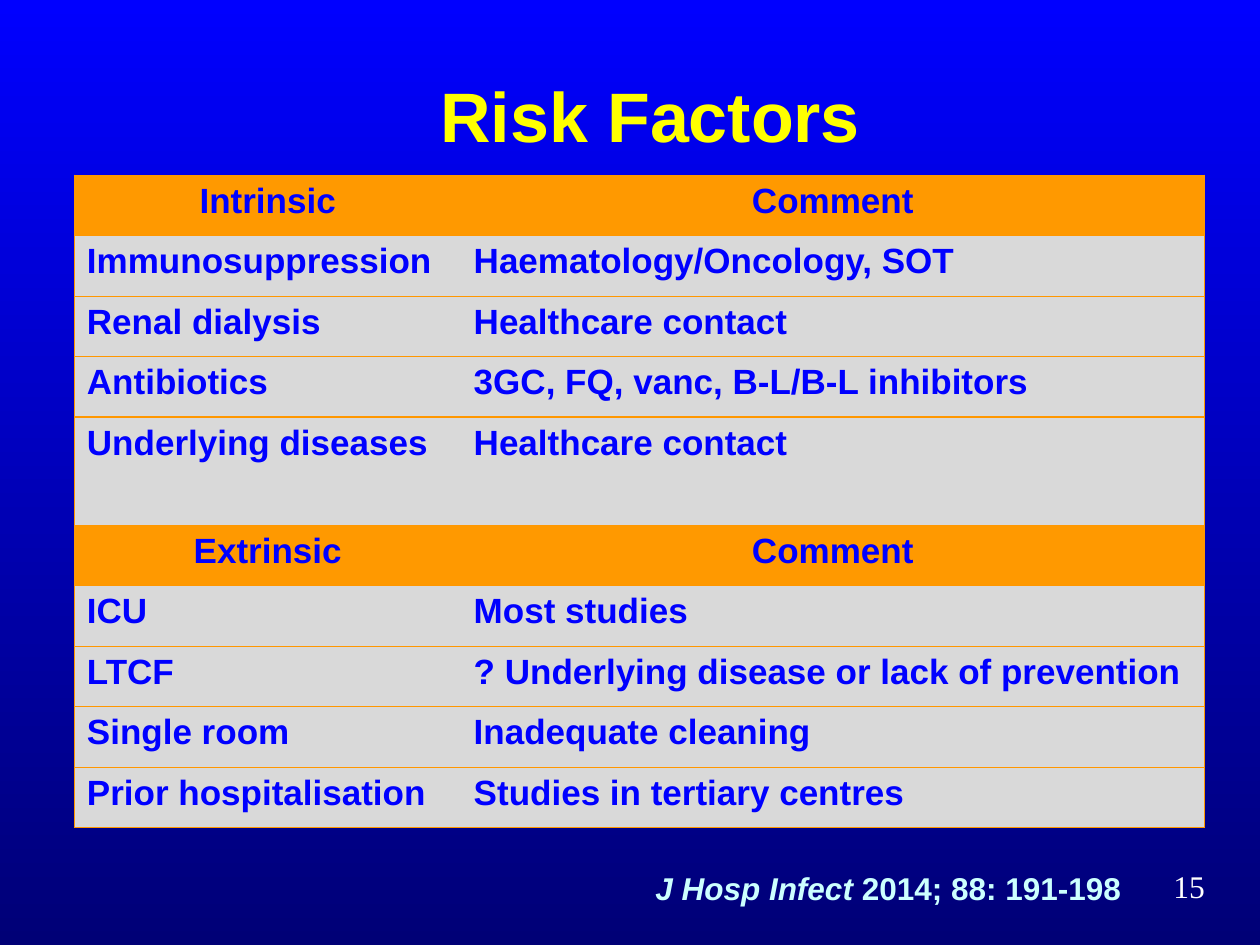
import dataclasses

import pptx
import pptx.dml.color
import pptx.enum.text
import pptx.oxml
import pptx.oxml.ns
import pptx.util

Inches = pptx.util.Inches
Pt = pptx.util.Pt
RGBColor = pptx.dml.color.RGBColor
Align = pptx.enum.text.PP_ALIGN
Anchor = pptx.enum.text.MSO_ANCHOR

BLUE = RGBColor(0x00, 0x00, 0xFF)
NAVY = RGBColor(0x00, 0x00, 0x76)
YELLOW = RGBColor(0xFF, 0xFF, 0x00)
ORANGE = RGBColor(0xFF, 0x99, 0x00)
BORDER = RGBColor(0xFF, 0x97, 0x00)
GREY = RGBColor(0xD9, 0xD9, 0xD9)
PALE_CYAN = RGBColor(0xCC, 0xFF, 0xFF)
WHITE = RGBColor(0xFF, 0xFF, 0xFF)

NO_STYLE = "{2D5ABB26-0587-4C30-8999-92F81FD0307C}"
COLUMN_WIDTHS = (3.07, 5.9)


@dataclasses.dataclass(frozen=True)
class RiskRow:
    factor: str
    comment: str
    heading: bool = False
    height: float = 0.48


RISK_ROWS = (
    RiskRow("Intrinsic", "Comment", heading=True),
    RiskRow("Immunosuppression", "Haematology/Oncology, SOT"),
    RiskRow("Renal dialysis", "Healthcare contact"),
    RiskRow("Antibiotics", "3GC, FQ, vanc, B-L/B-L inhibitors"),
    RiskRow("Underlying diseases", "Healthcare contact", height=0.86),
    RiskRow("Extrinsic", "Comment", heading=True),
    RiskRow("ICU", "Most studies"),
    RiskRow("LTCF", "? Underlying disease or lack of prevention"),
    RiskRow("Single room", "Inadequate cleaning"),
    RiskRow("Prior hospitalisation", "Studies in tertiary centres"),
)


def write(frame, text: str, *, size: float, color: RGBColor, font: str = "Arial",
          bold: bool = True, italic: bool = False, align=Align.LEFT) -> None:
    """Add a formatted run to the first paragraph of a text frame."""
    paragraph = frame.paragraphs[0]
    paragraph.alignment = align
    run = paragraph.add_run()
    run.text = text
    run.font.name = font
    run.font.size = Pt(size)
    run.font.bold = bold
    run.font.italic = italic
    run.font.color.rgb = color


def add_text_frame(slide, left: float, top: float, width: float, height: float):
    box = slide.shapes.add_textbox(Inches(left), Inches(top), Inches(width), Inches(height))
    box.text_frame.word_wrap = True
    return box.text_frame


def draw_borders(cell, sides: str) -> None:
    """Line the given sides, in the schema's order L, R, T, B."""
    properties = cell._tc.get_or_add_tcPr()
    for position, side in enumerate(sides):
        properties.insert(position, pptx.oxml.parse_xml(
            f'<a:ln{side} {pptx.oxml.ns.nsdecls("a")} w="{Pt(0.75)}">'
            f'<a:solidFill><a:srgbClr val="{BORDER}"/></a:solidFill></a:ln{side}>'))


def add_risk_table(slide, left: float, top: float, rows: tuple[RiskRow, ...]) -> None:
    table = slide.shapes.add_table(
        len(rows), len(COLUMN_WIDTHS), Inches(left), Inches(top),
        Inches(sum(COLUMN_WIDTHS)), Inches(sum(row.height for row in rows))).table
    table.first_row = table.horz_banding = False
    table._tbl.tblPr.find(pptx.oxml.ns.qn("a:tableStyleId")).text = NO_STYLE
    for column, width in zip(table.columns, COLUMN_WIDTHS):
        column.width = Inches(width)
    for index, row in enumerate(rows):
        table.rows[index].height = Inches(row.height)
        for cell, text, sides in zip(table.rows[index].cells,
                                     (row.factor, row.comment), ("LTB", "RTB")):
            cell.fill.solid()
            cell.fill.fore_color.rgb = ORANGE if row.heading else GREY
            write(cell.text_frame, text, size=20, color=BLUE,
                  align=Align.CENTER if row.heading else Align.LEFT)
            draw_borders(cell, sides)


def main() -> None:
    deck = pptx.Presentation()
    deck.slide_width, deck.slide_height = Inches(10), Inches(7.5)
    slide = deck.slides.add_slide(deck.slide_layouts[5])

    # Background, blue at the top to navy at the bottom
    backdrop = slide.background.fill
    backdrop.gradient()
    backdrop.gradient_angle = 270
    for stop, color in zip(backdrop.gradient_stops, (BLUE, NAVY)):
        stop.color.rgb = color

    # Title
    title = slide.shapes.title
    title.left, title.top = Inches(0.75), Inches(0.36)
    title.width, title.height = Inches(8.82), Inches(1.1)
    title.text_frame.vertical_anchor = Anchor.MIDDLE
    write(title.text_frame, "Risk Factors", size=40, color=YELLOW, align=Align.CENTER)

    # Risk factors
    add_risk_table(slide, 0.59, 1.39, RISK_ROWS)

    # Citation and page number
    citation = add_text_frame(slide, 4.45, 6.85, 5.2, 0.4)
    for text, italic in (("J Hosp Infect ", True), ("2014; 88: 191-198", False)):
        write(citation, text, size=18, color=PALE_CYAN, italic=italic, align=Align.CENTER)
    page_number = add_text_frame(slide, 7.58, 6.83, 2.08, 0.5)
    write(page_number, "15", size=18, color=WHITE, font="Times New Roman",
          bold=False, align=Align.RIGHT)

    deck.save("out.pptx")


if __name__ == "__main__":
    main()
